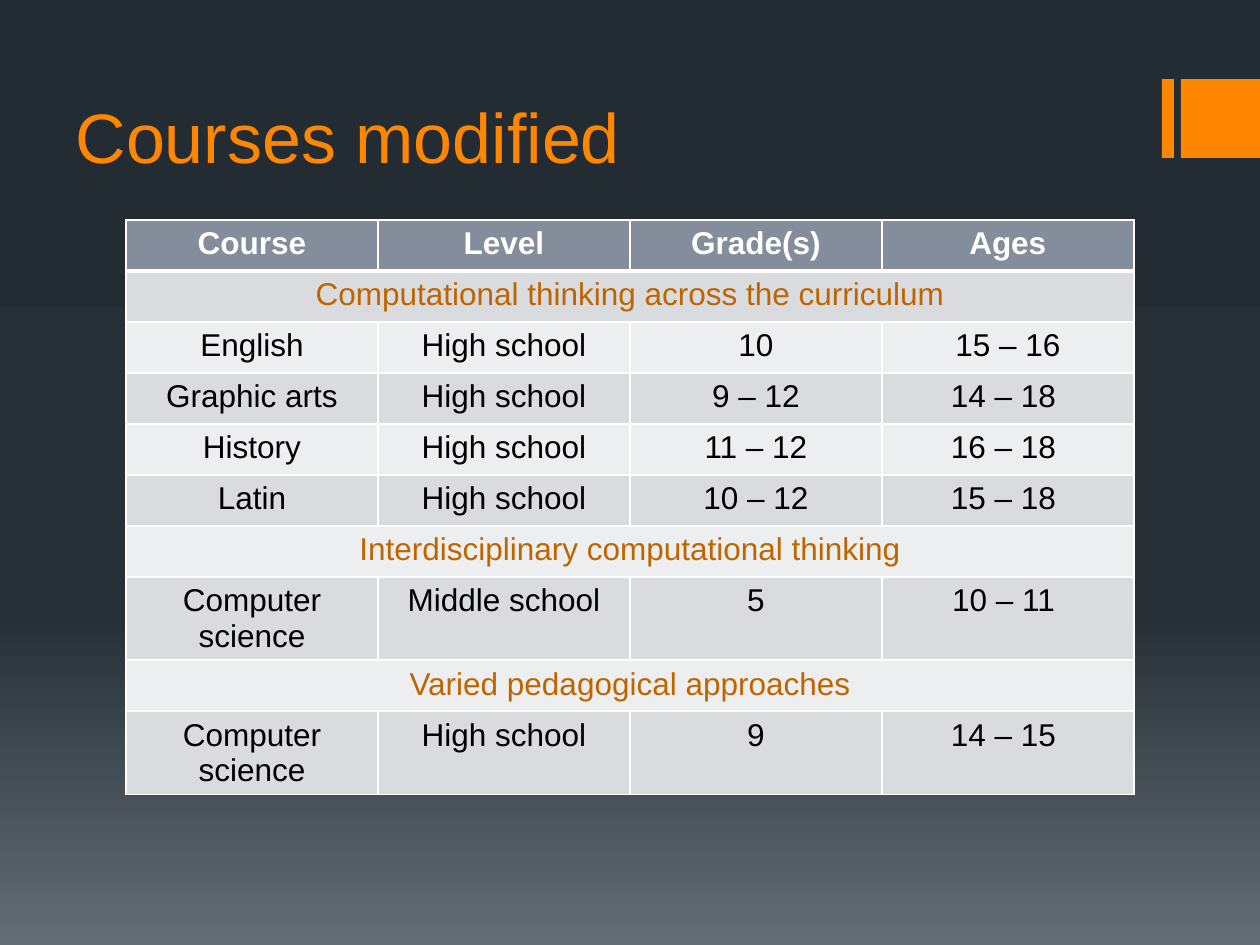
from copy import deepcopy

from lxml import etree
from pptx import Presentation
from pptx.dml.color import RGBColor
from pptx.enum.shapes import MSO_SHAPE
from pptx.enum.text import MSO_ANCHOR, MSO_AUTO_SIZE, PP_ALIGN
from pptx.oxml.ns import qn
from pptx.util import Emu, Pt

RECT = MSO_SHAPE.RECTANGLE
LEFT, CENTER = PP_ALIGN.LEFT, PP_ALIGN.CENTER
BOTTOM = MSO_ANCHOR.BOTTOM
NO_FIT = MSO_AUTO_SIZE.NONE

SCALE = 914400 // 126
COLORS = {
    "accent": "FF8600", "topic": "BF6500", "head": "838D9B",
    "dark": "D9DBDE", "light": "EDEEEF", "white": "FFFFFF", "black": "000000",
    "top": "242C33", "mid": "273037", "base": "636D76",
}
TITLE = {"size": Pt(40), "name": "Arial", "bold": False}
BODY = {"size": Pt(18), "name": "Arial", "bold": False}
HEAD = {**BODY, "bold": True}

# A row with a single entry is a topic that spans the table.
ROWS = [
    ["Course", "Level", "Grade(s)", "Ages"],
    ["Computational thinking across the curriculum"],
    ["English", "High school", "10", "15 – 16"],
    ["Graphic arts", "High school", "9 – 12", "14 – 18 "],
    ["History", "High school", "11 – 12", "16 – 18 "],
    ["Latin", "High school", "10 – 12", "15 – 18 "],
    ["Interdisciplinary computational thinking"],
    ["Computer science", "Middle school", "5", "10 – 11 "],
    ["Varied pedagogical approaches"],
    ["Computer science", "High school", "9", "14 – 15 "],
]
COLS, COL_W, ROW_H = 4, 252, 51


def px(num):
    return Emu(num * SCALE)


def rgb(name):
    return RGBColor.from_string(COLORS[name])


def style(para, form, color, align):
    para.alignment = align
    font = para.runs[0].font
    for key, val in form.items():
        setattr(font, key, val)
    font.color.rgb = rgb(color)


def paint_back(slide):
    fill = slide.background.fill
    fill.gradient()
    fill.gradient_angle = 270
    stops = next(slide.element.iter(qn("a:gsLst")))
    stops.insert(1, deepcopy(stops[0]))
    shades = [(0, "top"), (0.65, "mid"), (1, "base")]
    for stop, (pos, name) in zip(fill.gradient_stops, shades):
        stop.position = pos
        stop.color.rgb = rgb(name)


def add_bar(slide, left, width):
    bar = slide.shapes.add_shape(RECT, px(left), px(79), px(width), px(79))
    bar.shadow.inherit = False
    bar.fill.solid()
    bar.fill.fore_color.rgb = rgb("accent")
    bar.line.fill.background()


def set_title(slide, text):
    title = slide.shapes.title
    box = {"left": 63, "top": 25, "width": 1008, "height": 159}
    for key, val in box.items():
        setattr(title, key, px(val))
    frame = title.text_frame
    frame.text = text
    frame.auto_size = NO_FIT
    frame.vertical_anchor = BOTTOM
    style(frame.paragraphs[0], TITLE, "accent", LEFT)


def add_edges(cell, widths):
    """Draw white borders, given widths in points by side."""
    props = cell._tc.get_or_add_tcPr()
    for side, width in widths.items():
        line = etree.SubElement(props, qn(f"a:ln{side}"), w=str(Pt(width)))
        fill = etree.SubElement(line, qn("a:solidFill"))
        etree.SubElement(fill, qn("a:srgbClr"), val=COLORS["white"])


def row_look(num, row):
    """Return fill, text colour and font format of a row."""
    if num == 0:
        return "head", "white", HEAD
    fill = "dark" if num % 2 else "light"
    return fill, "topic" if len(row) == 1 else "black", BODY


def add_courses(slide):
    table = slide.shapes.add_table(
        len(ROWS), COLS, px(126), px(220), px(COLS * COL_W), px(len(ROWS) * ROW_H)
    ).table
    for num, row in enumerate(ROWS):
        fill, color, form = row_look(num, row)
        edges = {"L": 1, "R": 1, "T": 3 if num == 1 else 1, "B": 1 if num else 3}
        if len(row) == 1:
            table.cell(num, 0).merge(table.cell(num, COLS - 1))
        for col in range(COLS):
            cell = table.cell(num, col)
            add_edges(cell, edges)
            cell.fill.solid()
            cell.fill.fore_color.rgb = rgb(fill)
            if col < len(row):
                cell.text = row[col]
                style(cell.text_frame.paragraphs[0], form, color, CENTER)


def main():
    deck = Presentation()
    deck.slide_width, deck.slide_height = px(1260), px(945)
    slide = deck.slides.add_slide(deck.slide_layouts[5])
    paint_back(slide)
    add_bar(slide, 1162, 12)
    add_bar(slide, 1181, 79)
    set_title(slide, "Courses modified")
    add_courses(slide)
    deck.save("out.pptx")


if __name__ == "__main__":
    main()
